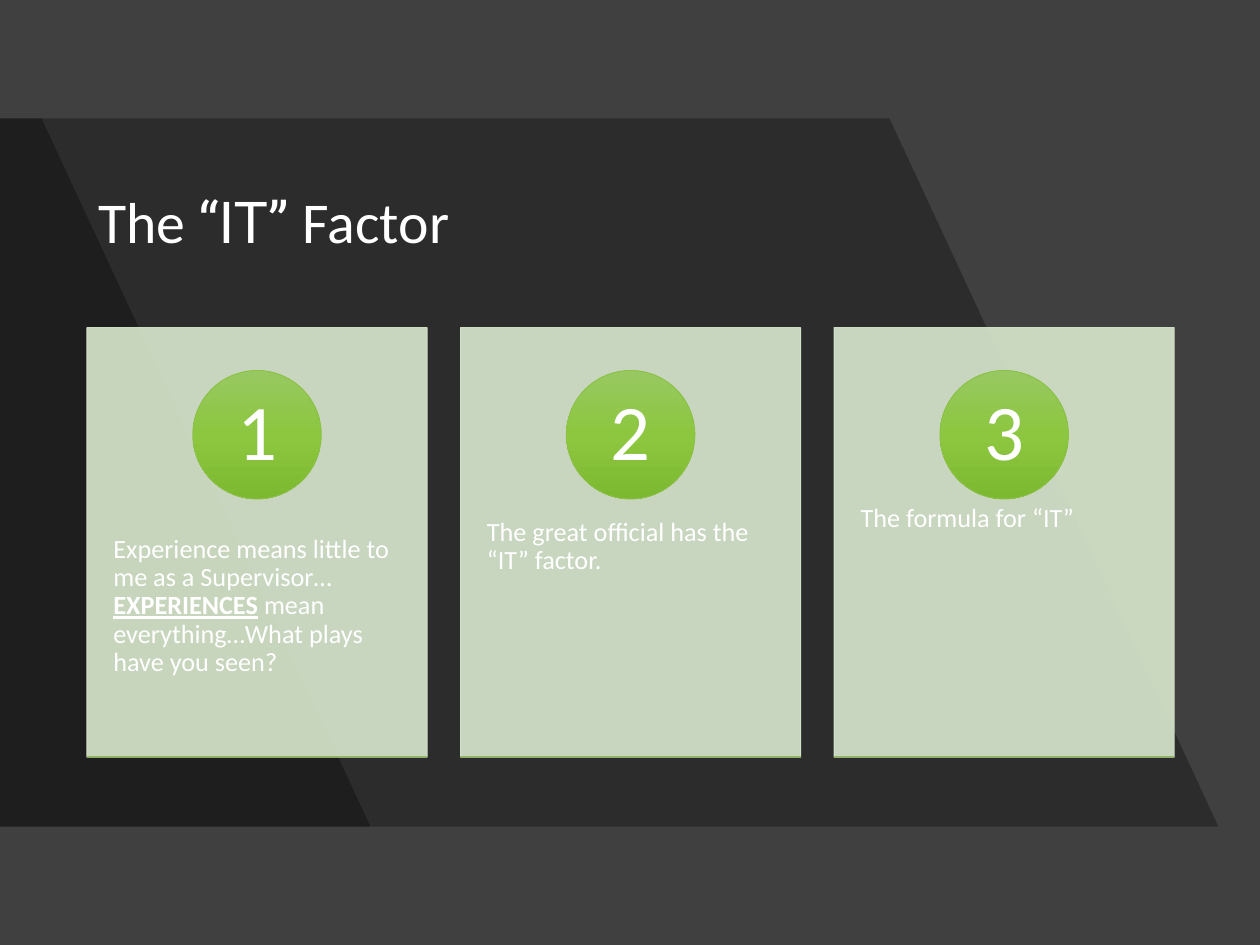
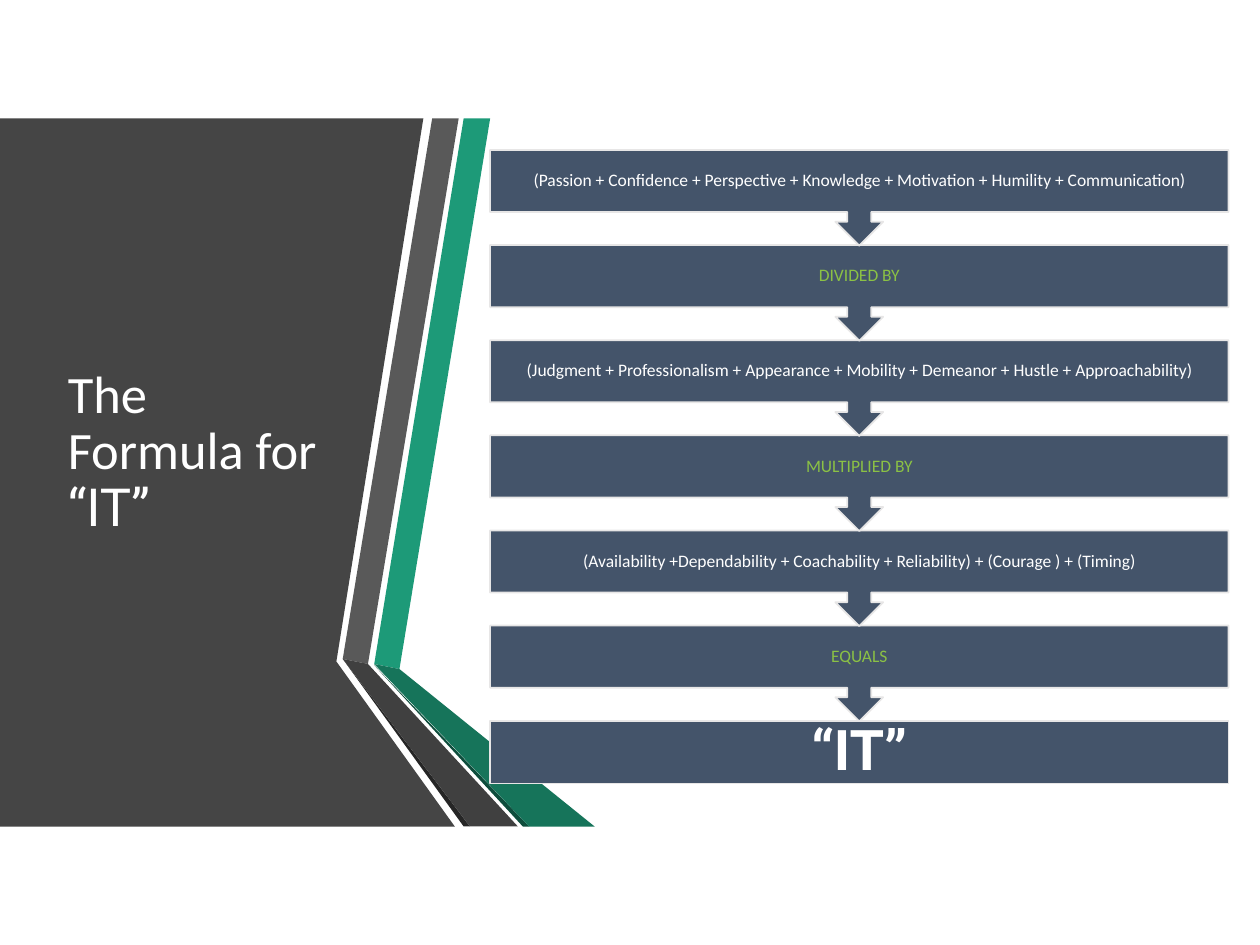
from copy import deepcopy
from dataclasses import dataclass

from lxml.etree import SubElement
from pptx import Presentation
from pptx.dml.color import RGBColor
from pptx.enum.shapes import MSO_CONNECTOR, MSO_SHAPE
from pptx.enum.text import MSO_ANCHOR, PP_ALIGN
from pptx.oxml.ns import qn
from pptx.util import Inches, Pt

COLUMNS, ROWS = 100, 75
BAND_TOP, BAND_BOTTOM = 9.4, 65.6


@dataclass(frozen=True)
class Theme:
    body_font: str = "Calibri"
    accent_font: str = "Roboto"
    white: str = "FFFFFF"
    charcoal: str = "404040"
    black: str = "000000"
    card: str = "DAE9CF"
    green: str = "8BC145"
    badge_stops: tuple = ("98C862", "8CC73F", "7DB831")
    step: str = "44546A"
    step_edge: str = "E7E6E6"
    panel: str = "454545"
    gray_ribbon: str = "595959"
    gray_shadow: str = "262626"
    teal_ribbon: str = "1D9A78"
    teal_fold: str = "16745A"
    teal_shadow: str = "0E4D3C"
    title_size: float = 33
    side_title_size: float = 30
    badge_size: float = 45
    card_size: float = 15
    step_size: float = 10
    result_size: float = 32
    hairline: float = 0.5
    step_line: float = 1


@dataclass(frozen=True)
class Words:
    """A run of text; accent switches to the second font."""
    text: str
    accent: bool = False
    bold: bool = False
    underline: bool = False


class Deck:
    def __init__(self, theme):
        self.theme = theme
        self.presentation = Presentation()
        self.presentation.slide_width = Inches(10)
        self.presentation.slide_height = Inches(7.5)
        self.slide = None

    def x(self, columns):
        return round(self.presentation.slide_width * columns / COLUMNS)

    def y(self, rows):
        return round(self.presentation.slide_height * rows / ROWS)

    def box(self, left, top, width, height):
        return self.x(left), self.y(top), self.x(width), self.y(height)

    def new_slide(self, background):
        layout = self.presentation.slide_layouts[6]
        self.slide = self.presentation.slides.add_slide(layout)
        fill = self.slide.background.fill
        fill.solid()
        fill.fore_color.rgb = RGBColor.from_string(background)

    def style(self, shape, fill, edge=None, weight=0, opacity=100):
        """Fill with one colour, or a top-to-bottom gradient for a tuple of colours."""
        shape.shadow.inherit = False
        if isinstance(fill, tuple):
            self.shade(shape, fill)
        else:
            shape.fill.solid()
            shape.fill.fore_color.rgb = RGBColor.from_string(fill)
        if edge:
            shape.line.color.rgb = RGBColor.from_string(edge)
            shape.line.width = Pt(weight)
        else:
            shape.line.fill.background()
        if opacity < 100:
            for color in shape._element.spPr.iter(qn("a:srgbClr")):
                SubElement(color, qn("a:alpha"), val=str(opacity * 1000))

    def shade(self, shape, colors):
        shape.fill.gradient()
        shape.fill.gradient_angle = 270
        stop_list = shape._element.spPr.find(".//" + qn("a:gsLst"))
        while len(stop_list) < len(colors):
            stop_list.insert(1, deepcopy(stop_list[0]))
        for index, (stop, color) in enumerate(zip(shape.fill.gradient_stops, colors)):
            stop.position = index / (len(colors) - 1)
            stop.color.rgb = RGBColor.from_string(color)

    def polygon(self, points, fill, opacity=100):
        corners = [(self.x(column), self.y(row)) for column, row in points]
        builder = self.slide.shapes.build_freeform(*corners[0], scale=1.0)
        builder.add_line_segments(corners[1:], close=True)
        self.style(builder.convert_to_shape(), fill, opacity=opacity)

    def shape(self, kind, area, fill, edge, weight, opacity=100):
        shape = self.slide.shapes.add_shape(kind, *self.box(*area))
        self.style(shape, fill, edge, weight, opacity)
        return shape

    def rule(self, left, top, width, color):
        line = self.slide.shapes.add_connector(
            MSO_CONNECTOR.STRAIGHT, self.x(left), self.y(top), self.x(left + width), self.y(top))
        line.line.color.rgb = RGBColor.from_string(color)
        line.line.width = Pt(self.theme.hairline)
        SubElement(line._element.spPr, qn("a:effectLst"))

    def label(self, shape, runs, size, color=None, align=PP_ALIGN.CENTER,
              anchor=MSO_ANCHOR.MIDDLE, inset=(0.8, 0.1)):
        frame = shape.text_frame
        frame.word_wrap = True
        frame.vertical_anchor = anchor
        frame.margin_left = frame.margin_right = self.x(inset[0])
        frame.margin_top = frame.margin_bottom = self.y(inset[1])
        paragraph = frame.paragraphs[0]
        paragraph.alignment = align
        paragraph.line_spacing = 0.9
        for words in runs:
            run = paragraph.add_run()
            run.text = words.text
            font = run.font
            font.name = self.theme.accent_font if words.accent else self.theme.body_font
            font.size = Pt(size)
            font.bold, font.underline = words.bold, words.underline
            font.color.rgb = RGBColor.from_string(color or self.theme.white)

    def text(self, area, runs, size, **layout):
        textbox = self.slide.shapes.add_textbox(*self.box(*area))
        self.label(textbox, runs, size, align=PP_ALIGN.LEFT, **layout)

    def title(self, area, runs, size):
        self.text(area, runs, size, inset=(1, 0.5))

    def slanted_band(self, top_width):
        slant = 26.1
        self.polygon([(0, BAND_TOP), (top_width, BAND_TOP),
                      (top_width + slant, BAND_BOTTOM), (0, BAND_BOTTOM)],
                     self.theme.black, opacity=30)

    def card(self, left, number, runs):
        theme = self.theme
        top, width, height, badge = 26, 27, 34.1, 10.2
        self.shape(MSO_SHAPE.RECTANGLE, (left, top, width, height),
                   theme.card, theme.card, theme.hairline, opacity=90)
        self.text((left, 38.9, width, 20.4), runs, theme.card_size,
                  anchor=MSO_ANCHOR.TOP, inset=(2.1, 3.6))
        circle = self.shape(
            MSO_SHAPE.OVAL, (left + (width - badge) / 2, 29.4, badge, badge),
            theme.badge_stops, theme.green, theme.hairline)
        self.label(circle, [Words(str(number))], theme.badge_size, inset=(0, 0))
        self.rule(left, top + height - 0.1, width, theme.green)

    def step(self, kind, top, height, words, size, color):
        theme = self.theme
        step = self.shape(kind, (38.9, top, 58.6, height),
                          theme.step, theme.step_edge, theme.step_line)
        self.label(step, [words], size, color)


def factor_slide(deck):
    theme = deck.theme
    deck.new_slide(theme.charcoal)
    for top_width in (70.6, 3.3):
        deck.slanted_band(top_width)
    deck.title((6.8, 12.4, 86.3, 10.9),
               [Words("The "), Words("“IT” ", accent=True), Words("Factor")],
               theme.title_size)
    cards = [
        [Words("Experience means little to me as a Supervisor…"),
         Words("EXPERIENCES", bold=True, underline=True),
         Words(" mean everything…What plays have you seen?")],
        [Words("The great official has the “IT” factor.")],
        [Words("The formula for “IT”")],
    ]
    for index, runs in enumerate(cards):
        deck.card(6.9 + 29.65 * index, index + 1, runs)


def formula_slide(deck):
    theme = deck.theme
    deck.new_slide(theme.white)
    ribbons = [
        (theme.panel, [(0, BAND_TOP), (33.6, BAND_TOP), (26.7, 52.5),
                       (36.1, BAND_BOTTOM), (0, BAND_BOTTOM)]),
        (theme.teal_ribbon, [(29.7, 52.7), (31.7, 53.1), (38.9, BAND_TOP), (36.8, BAND_TOP)]),
        (theme.gray_ribbon, [(27.2, 52.3), (29.2, 52.7), (36.4, BAND_TOP), (34.3, BAND_TOP)]),
        (theme.gray_shadow, [(27.2, 52.3), (36.8, BAND_BOTTOM), (37.3, BAND_BOTTOM)]),
        (theme.teal_shadow, [(29.7, 52.8), (41.5, BAND_BOTTOM), (42, BAND_BOTTOM)]),
        (theme.teal_fold, [(29.7, 52.7), (42, BAND_BOTTOM), (47.2, BAND_BOTTOM), (31.7, 53.1)]),
        (theme.charcoal, [(27.2, 52.3), (37.3, BAND_BOTTOM), (41.1, BAND_BOTTOM), (29.2, 52.7)]),
    ]
    for color, points in ribbons:
        deck.polygon(points, color)
    deck.title((4.4, 15, 22.8, 41.9),
               [Words("The Formula for"), Words(" “IT”", accent=True)],
               theme.side_title_size)

    first_top, pitch = 11.9, 7.55
    steps = [
        "(Passion + Confidence + Perspective + Knowledge + Motivation + Humility + Communication)",
        "DIVIDED BY",
        "(Judgment + Professionalism + Appearance + Mobility + Demeanor + Hustle + Approachability)",
        "MULTIPLIED BY",
        "(Availability +Dependability + Coachability + Reliability) + (Courage ) + (Timing)",
        "EQUALS",
    ]
    deck.step(MSO_SHAPE.RECTANGLE, first_top + pitch * len(steps), 5,
              Words("“IT”", accent=True, bold=True), theme.result_size, theme.white)
    # Bottom to top, so that each arrow tip lies over the step below it.
    for index, operation in reversed(list(enumerate(steps))):
        color = theme.green if index % 2 else theme.white
        deck.step(MSO_SHAPE.DOWN_ARROW_CALLOUT, first_top + pitch * index, 7.6,
                  Words(operation), theme.step_size, color)


def main():
    deck = Deck(Theme())
    factor_slide(deck)
    formula_slide(deck)
    deck.presentation.save("out.pptx")


if __name__ == "__main__":
    main()
